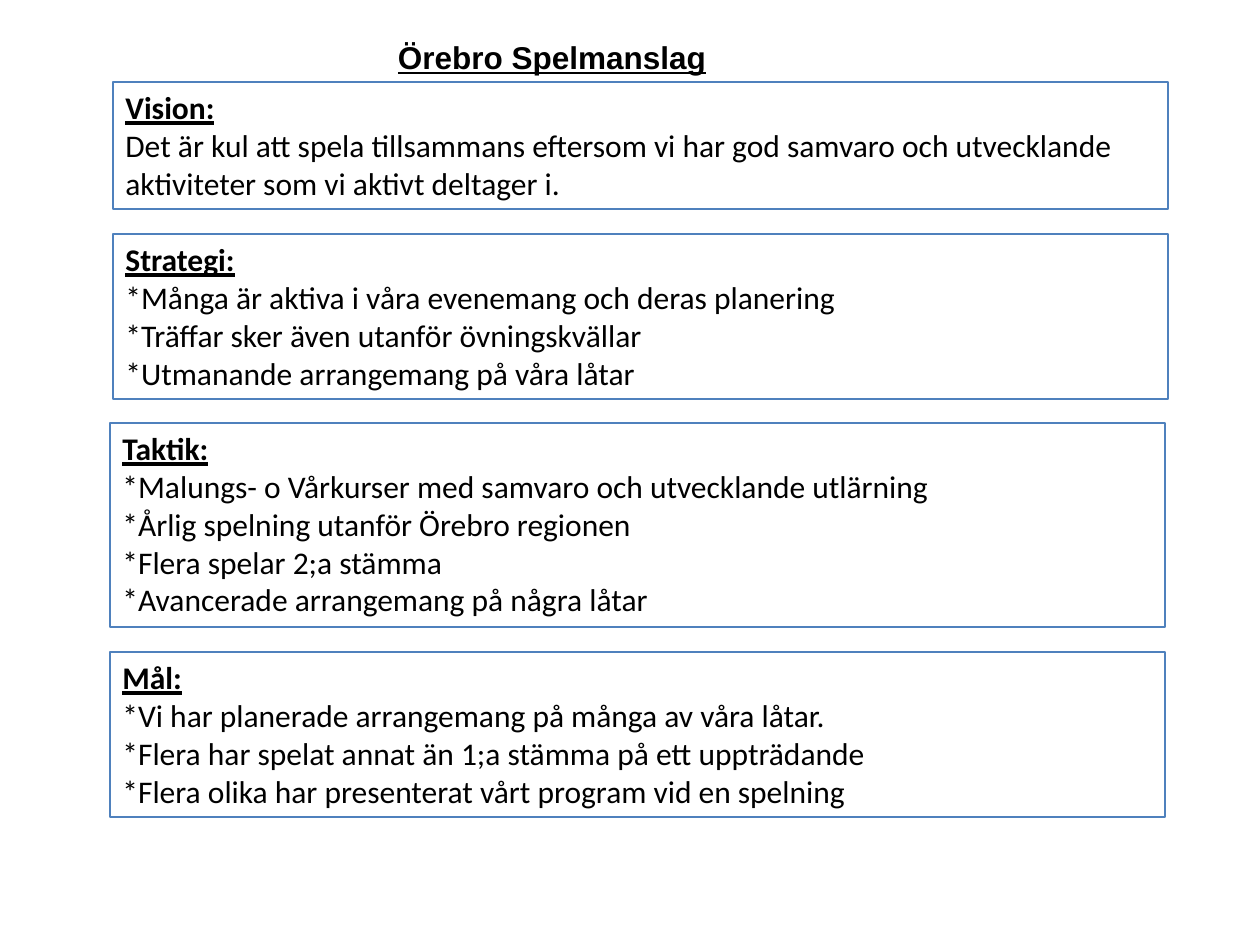
from dataclasses import dataclass

from pptx import Presentation
from pptx.dml.color import RGBColor as RGB
from pptx.enum.shapes import MSO_SHAPE as Shape
from pptx.enum.text import MSO_ANCHOR as Anchor, MSO_AUTO_SIZE as Fit, PP_ALIGN as Align
from pptx.util import Pt


@dataclass(frozen=True)
class Theme:
    ink: RGB = RGB(0x00, 0x00, 0x00)
    edge: RGB = RGB(0x4F, 0x81, 0xBD)
    size: int = 18
    line: float = 0.75
    head: str = "Arial"
    body: str = "Calibri"


theme = Theme()


def px(n):
    """Turn pixels, 126 to the inch, into EMU."""
    return round(n * 914400 / 126)


def write(par, text, font=theme.body, strong=False):
    """Add a run to a left-aligned paragraph; strong is bold and underlined."""
    par.alignment = Align.LEFT
    run = par.add_run()
    run.text = text
    run.font.name = font
    run.font.size = Pt(theme.size)
    run.font.color.rgb = theme.ink
    run.font.bold = run.font.underline = strong


deck = Presentation()
deck.slide_width, deck.slide_height = px(1260), px(945)
slide = deck.slides.add_slide(deck.slide_layouts[5])

title = slide.shapes.title
title.left, title.top, title.width, title.height = px(134), px(32), px(952), px(50)
frame = title.text_frame
frame.auto_size = Fit.NONE
frame.vertical_anchor = Anchor.TOP
frame.margin_left = px(264)
write(frame.paragraphs[0], "Örebro Spelmanslag", font=theme.head, strong=True)

# left, top, height, heading, lines
boxes = [
    (113, 82, 127, "Vision:", [
        "Det är kul att spela tillsammans eftersom vi har god samvaro "
        "och utvecklande aktiviteter som vi aktivt deltager i.",
    ]),
    (113, 234, 165, "Strategi:", [
        "*Många är aktiva i våra evenemang och deras planering",
        "*Träffar sker även utanför övningskvällar",
        "*Utmanande arrangemang på våra låtar",
    ]),
    (110, 423, 204, "Taktik:", [
        "*Malungs- o Vårkurser med samvaro och utvecklande utlärning",
        "*Årlig spelning utanför Örebro regionen",
        "*Flera spelar 2;a stämma",
        "*Avancerade arrangemang på några låtar",
    ]),
    (110, 652, 165, "Mål:", [
        "*Vi har planerade arrangemang på många av våra låtar.",
        "*Flera har spelat annat än 1;a stämma på ett uppträdande",
        "*Flera olika har presenterat vårt program vid en spelning",
    ]),
]

for left, top, high, head, lines in boxes:
    box = slide.shapes.add_shape(Shape.RECTANGLE, px(left), px(top), px(1055), px(high))
    box.shadow.inherit = False
    box.fill.background()
    box.line.color.rgb = theme.edge
    box.line.width = Pt(theme.line)
    frame = box.text_frame
    frame.word_wrap = True
    frame.vertical_anchor = Anchor.TOP

    par = frame.paragraphs[0]
    write(par, head, strong=True)
    par.add_line_break()
    write(par, lines[0])
    for line in lines[1:]:
        write(frame.add_paragraph(), line)

deck.save("out.pptx")
